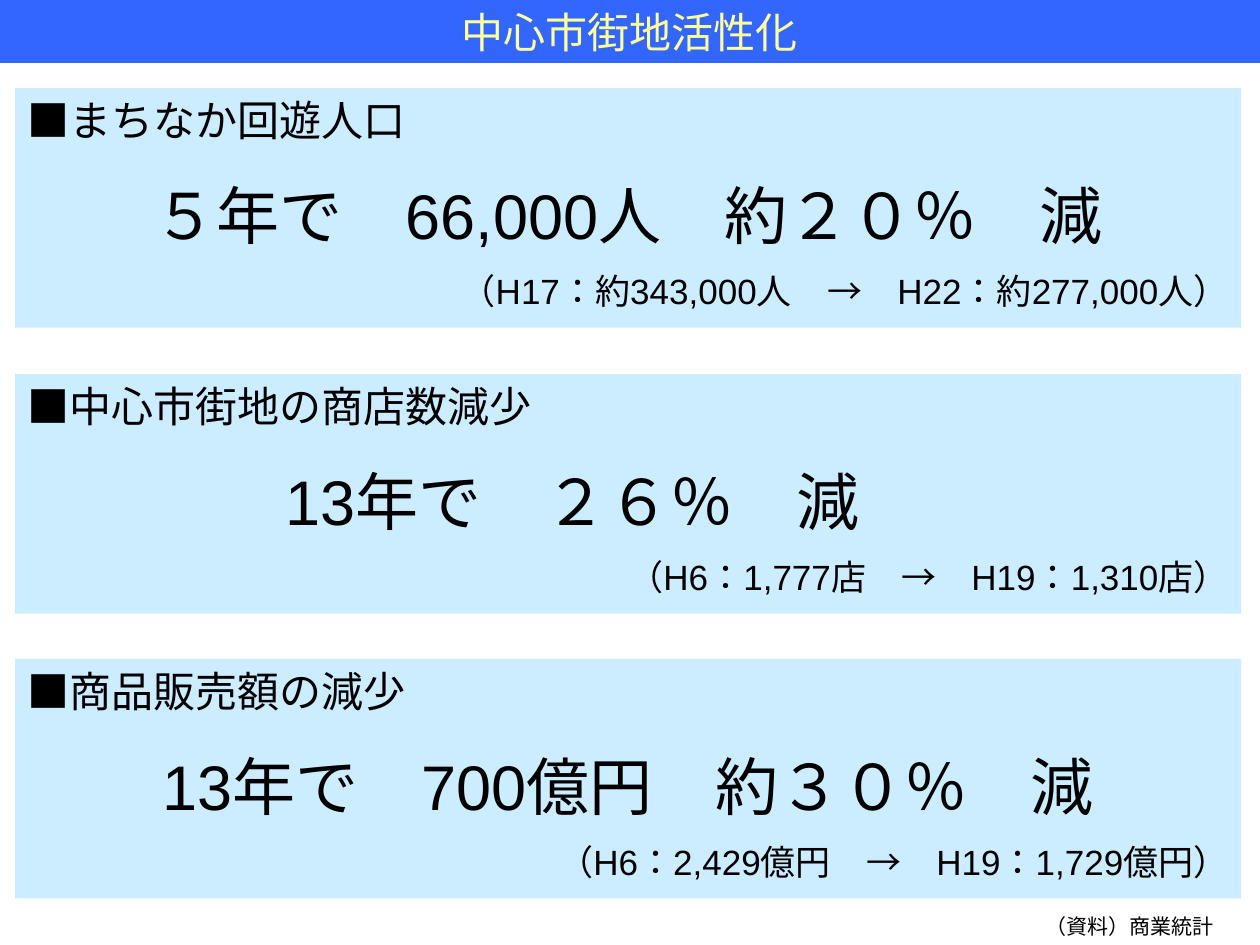
from pptx import Presentation
from pptx.dml.color import RGBColor
from pptx.enum.lang import MSO_LANGUAGE_ID
from pptx.enum.shapes import MSO_SHAPE
from pptx.enum.text import MSO_ANCHOR, PP_ALIGN
from pptx.util import Emu, Pt

RECT = MSO_SHAPE.RECTANGLE
TOP = MSO_ANCHOR.TOP
LEFT, CENTER, RIGHT = PP_ALIGN.LEFT, PP_ALIGN.CENTER, PP_ALIGN.RIGHT
JAPANESE = MSO_LANGUAGE_ID.JAPANESE

EMU_PER_PX = 9144  # 100 px to the inch
COLORS = {
    "bar": "3366FF",
    "title": "FFFF99",
    "panel": "CCECFF",
    "text": "000000",
}


def px(length):
    return Emu(length * EMU_PER_PX)


class SlideBuilder:
    """Holds the style and the current slide."""

    font = "Arial"

    def __init__(self, deck):
        self.page = deck.slides.add_slide(deck.slide_layouts[6])

    def color(self, name):
        return RGBColor.from_string(COLORS[name])

    def add_lines(self, box, lines, color="text"):
        """Each line is (text, size, alignment, indent)."""
        frame = box.text_frame
        for name, value in {"word_wrap": True, "vertical_anchor": TOP}.items():
            setattr(frame, name, value)
        for index, (text, size, alignment, indent) in enumerate(lines):
            para = frame.add_paragraph() if index else frame.paragraphs[0]
            para.alignment = alignment
            if index:
                para.space_before = Pt(size / 2)
            if indent:
                para._p.get_or_add_pPr().set("marL", str(px(indent)))
            span = para.add_run()
            span.text = text
            formats = {"name": self.font, "size": Pt(size), "language_id": JAPANESE}
            for name, value in formats.items():
                setattr(span.font, name, value)
            span.font.color.rgb = self.color(color)

    def block(self, area, fill, lines, color="text"):
        box = self.page.shapes.add_shape(RECT, *map(px, area))
        box.shadow.inherit = False
        box.fill.solid()
        box.fill.fore_color.rgb = self.color(fill)
        box.line.fill.background()
        self.add_lines(box, lines, color)

    def label(self, area, lines):
        self.add_lines(self.page.shapes.add_textbox(*map(px, area)), lines)


# Heading, key figure, its alignment and indent, comparison of years
PANELS = [
    ("■まちなか回遊人口", "５年で　66,000人　約２０％　減", CENTER, 0,
     "（H17：約343,000人　→　H22：約277,000人）"),
    ("■中心市街地の商店数減少", "13年で　２６％　減", LEFT, 205,
     "（H6：1,777店　→　H19：1,310店）"),
    ("■商品販売額の減少", "13年で　700億円　約３０％　減", CENTER, 0,
     "（H6：2,429億円　→　H19：1,729億円）"),
]


def main():
    deck = Presentation()
    deck.slide_width, deck.slide_height = px(1000), px(750)
    slide = SlideBuilder(deck)

    # Title bar
    slide.block((0, 0, 1000, 50), "bar",
                [("中心市街地活性化", 24, CENTER, 0)], "title")

    # Three panels at an equal pitch
    for index, (heading, figure, alignment, indent, years) in enumerate(PANELS):
        top = 70 + (453 * index + 1) // 2
        slide.block((12, top, 973, 190), "panel", [
            (heading, 24, LEFT, 0),
            (figure, 36, alignment, indent),
            (years, 20, RIGHT, 0),
        ])

    # Source of the figures
    slide.label((634, 720, 339, 30), [("（資料）商業統計", 12, RIGHT, 0)])

    deck.save("out.pptx")


if __name__ == "__main__":
    main()
